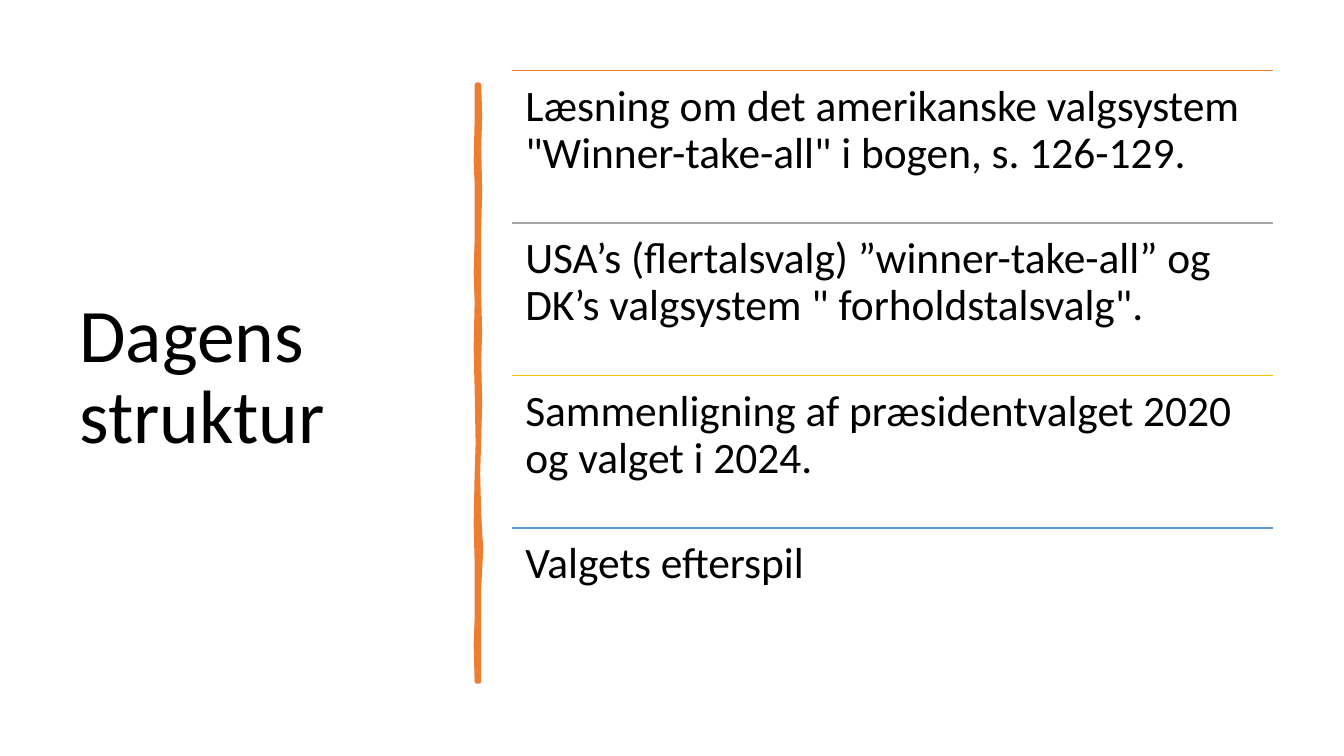
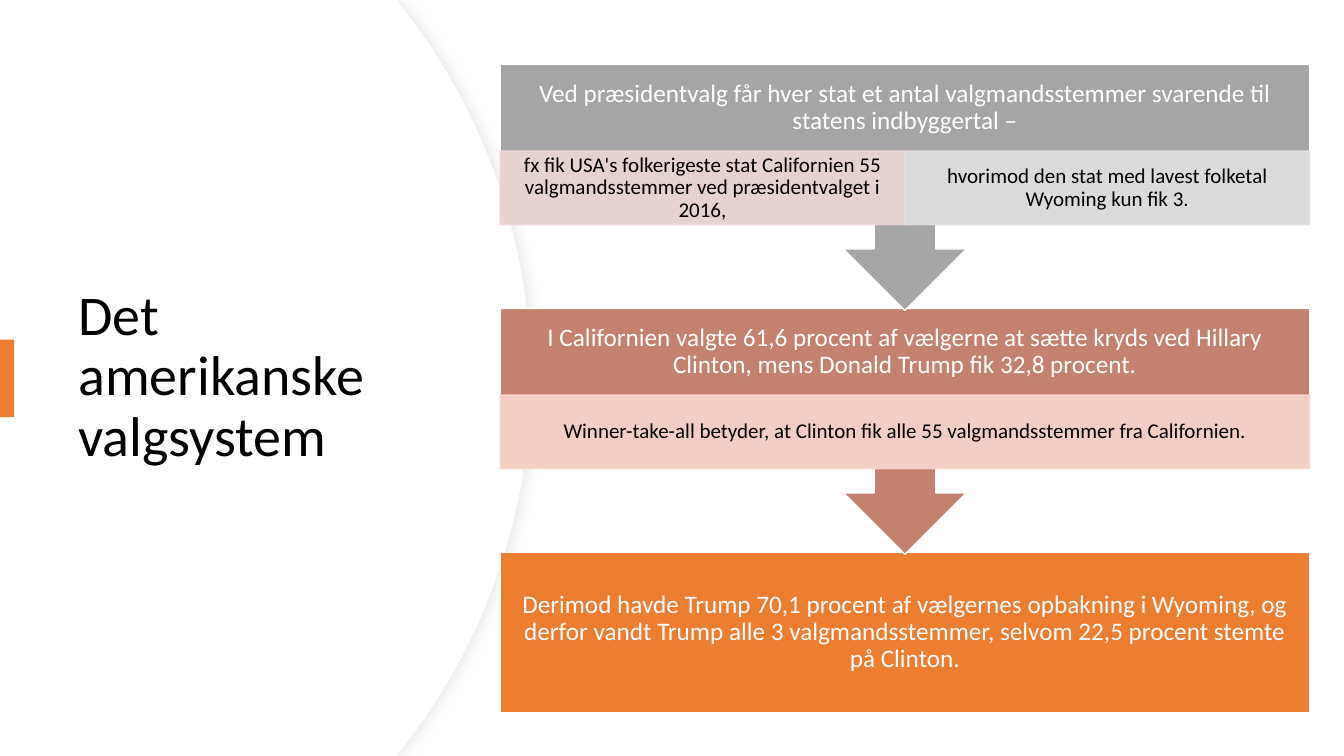
from math import sqrt
from lxml.etree import SubElement
from pptx import Presentation
from pptx.dml.color import RGBColor
from pptx.enum.shapes import MSO_CONNECTOR as CONNECTOR, MSO_SHAPE as SHAPE
from pptx.enum.text import MSO_ANCHOR as ANCHOR, PP_ALIGN as ALIGN
from pptx.oxml.ns import qn
from pptx.util import Inches, Pt

FONT = "Calibri"
BLACK = RGBColor(0x00, 0x00, 0x00)
WHITE = RGBColor(0xFF, 0xFF, 0xFF)
ORANGE = RGBColor(0xED, 0x7D, 0x31)
GRAY = RGBColor(0xA5, 0xA5, 0xA5)
GOLD = RGBColor(0xFF, 0xC0, 0x00)
BLUE = RGBColor(0x5B, 0x9B, 0xD5)
CLAY = RGBColor(0xC4, 0x81, 0x70)
PALE_CLAY = RGBColor(0xF8, 0xD7, 0xCE)
PALE_ROSE = RGBColor(0xED, 0xD9, 0xD7)
PALE_GRAY = RGBColor(0xE1, 0xE1, 0xE1)
RIM = RGBColor(0xEF, 0xEF, 0xEF)


def add_text(page, text, at, size, color=BLACK, align=ALIGN.LEFT,
             anchor=ANCHOR.MIDDLE, inset=(0.1, 0.05)):
    box = page.shapes.add_textbox(*map(Inches, at))
    frame = box.text_frame
    frame.word_wrap = True
    frame.vertical_anchor = anchor
    frame.margin_left = frame.margin_right = Inches(inset[0])
    frame.margin_top = frame.margin_bottom = Inches(inset[1])
    para = frame.paragraphs[0]
    para.alignment = align
    para.line_spacing = 0.9
    span = para.add_run()
    span.text = text
    span.font.name = FONT
    span.font.size = Pt(size)
    span.font.color.rgb = color


def paint(shape, fill, line=None, width=1, alpha=None):
    shape.shadow.inherit = False
    shape.fill.solid()
    shape.fill.fore_color.rgb = fill
    if line is None:
        shape.line.fill.background()
    else:
        shape.line.color.rgb = line
        shape.line.width = Pt(width)
    if alpha:
        for color in shape._element.spPr.iter(qn("a:srgbClr")):
            SubElement(color, qn("a:alpha"), val=str(alpha * 1000))


deck = Presentation()
deck.slide_width, deck.slide_height = Inches(13.33), Inches(7.5)
blank = deck.slide_layouts[6]

page = deck.slides.add_slide(blank)
add_text(page, "Dagens struktur", (0.69, 0.7, 3.74, 6.11), 54)

right_edge = [(4.75, 0.84), (4.76, 1.15), (4.75, 1.46), (4.76, 1.9), (4.75, 2.26),
              (4.75, 2.94), (4.76, 3.3), (4.75, 3.56), (4.76, 4), (4.75, 4.36),
              (4.74, 4.7), (4.75, 5.1), (4.77, 5.45), (4.75, 5.84), (4.75, 6.76)]
left_edge = [(4.73, 6.76), (4.72, 6.4), (4.73, 6.13), (4.73, 5.57), (4.72, 5.2),
             (4.73, 4.71), (4.74, 4.4), (4.73, 3.86), (4.72, 3.45), (4.73, 3),
             (4.72, 2.7), (4.73, 2.38), (4.73, 1.81), (4.72, 1.6), (4.73, 1.2), (4.73, 0.84)]
start, *rest = [(Inches(x), Inches(y)) for x, y in right_edge + left_edge]
builder = page.shapes.build_freeform(*start)
builder.add_line_segments(rest)
paint(builder.convert_to_shape(), ORANGE, ORANGE, 3.25)

agenda = [
    (ORANGE, "Læsning om det amerikanske valgsystem \"Winner-take-all\" i bogen, s. 126-129."),
    (GRAY, "USA’s (flertalsvalg) ”winner-take-all” og DK’s valgsystem \" forholdstalsvalg\"."),
    (GOLD, "Sammenligning af præsidentvalget 2020 og valget i 2024."),
    (BLUE, "Valgets efterspil"),
]
left, width, row_height = 5.08, 7.55, 1.513
for row, (color, text) in enumerate(agenda):
    top = 0.7 + row * row_height
    rule = page.shapes.add_connector(CONNECTOR.STRAIGHT, Inches(left), Inches(top),
                                     Inches(left + width), Inches(top))
    rule.line.color.rgb = color
    rule.line.width = Pt(1)
    SubElement(rule._element.spPr, qn("a:effectLst"))
    add_text(page, text, (left, top, width, row_height), 31,
             anchor=ANCHOR.TOP, inset=(0.13, 0.13))

page = deck.slides.add_slide(blank)
radius, middle, steps = 5.95, 3.75, 60
for edge, rim in ((5.27, RIM), (5.26, None)):
    builder = page.shapes.build_freeform(0, 0)
    arc = []
    for step in range(steps + 1):
        y = 2 * middle * step / steps
        x = edge - radius + sqrt(radius ** 2 - (y - middle) ** 2)
        arc.append((Inches(x), Inches(y)))
    builder.add_line_segments(arc + [(0, Inches(7.5))])
    disc = builder.convert_to_shape()
    paint(disc, WHITE, rim, 0.75)
    if rim:
        effects = disc._element.spPr.find(qn("a:effectLst"))
        shadow = SubElement(effects, qn("a:outerShdw"), blurRad=str(Pt(7)),
                            dist=str(Pt(3)), dir="0", algn="l", rotWithShape="0")
        tint = SubElement(shadow, qn("a:srgbClr"), val="D9D9D9")
        SubElement(tint, qn("a:alpha"), val="50000")

add_text(page, "Det amerikanske valgsystem", (0.68, 1.27, 3.94, 4.95), 40)
accent = page.shapes.add_shape(SHAPE.RECTANGLE, 0, Inches(3.37), Inches(0.14), Inches(0.77))
paint(accent, ORANGE)

left, width = 4.96, 8.03
steps_down = [
    (5.48, 1.59, 1.59, ORANGE,
     "Derimod havde Trump 70,1 procent af vælgernes opbakning i Wyoming, og derfor vandt "
     "Trump alle 3 valgmandsstemmer, selvom 22,5 procent stemte på Clinton.", []),
    (3.06, 2.44, 0.86, CLAY,
     "I Californien valgte 61,6 procent af vælgerne at sætte kryds ved Hillary Clinton, "
     "mens Donald Trump fik 32,8 procent.",
     [(PALE_CLAY, "Winner-take-all betyder, at Clinton fik alle 55 valgmandsstemmer "
                  "fra Californien.")]),
    (0.64, 2.44, 0.86, GRAY,
     "Ved præsidentvalg får hver stat et antal valgmandsstemmer svarende til statens "
     "indbyggertal –",
     [(PALE_ROSE, "fx fik USA's folkerigeste stat Californien 55 valgmandsstemmer ved "
                  "præsidentvalget i 2016,"),
      (PALE_GRAY, "hvorimod den stat med lavest folketal Wyoming kun fik 3.")]),
]
for top, height, head_height, color, heading, details in steps_down:
    kind = SHAPE.UP_ARROW_CALLOUT if details else SHAPE.RECTANGLE
    block = page.shapes.add_shape(kind, *map(Inches, (left, top, width, height)))
    block.rotation = 180 if details else 0
    paint(block, color, WHITE)
    add_text(page, heading, (left, top, width, head_height), 18, WHITE,
             ALIGN.CENTER, inset=(0.14, 0.14))
    for column, (tint, text) in enumerate(details):
        cell_width = width / len(details)
        at = (left + column * cell_width, top + head_height, cell_width, 0.73)
        cell = page.shapes.add_shape(SHAPE.RECTANGLE, *map(Inches, at))
        paint(cell, tint, tint, alpha=90)
        add_text(page, text, at, 15, align=ALIGN.CENTER, inset=(0.12, 0.02))

deck.save("out.pptx")
